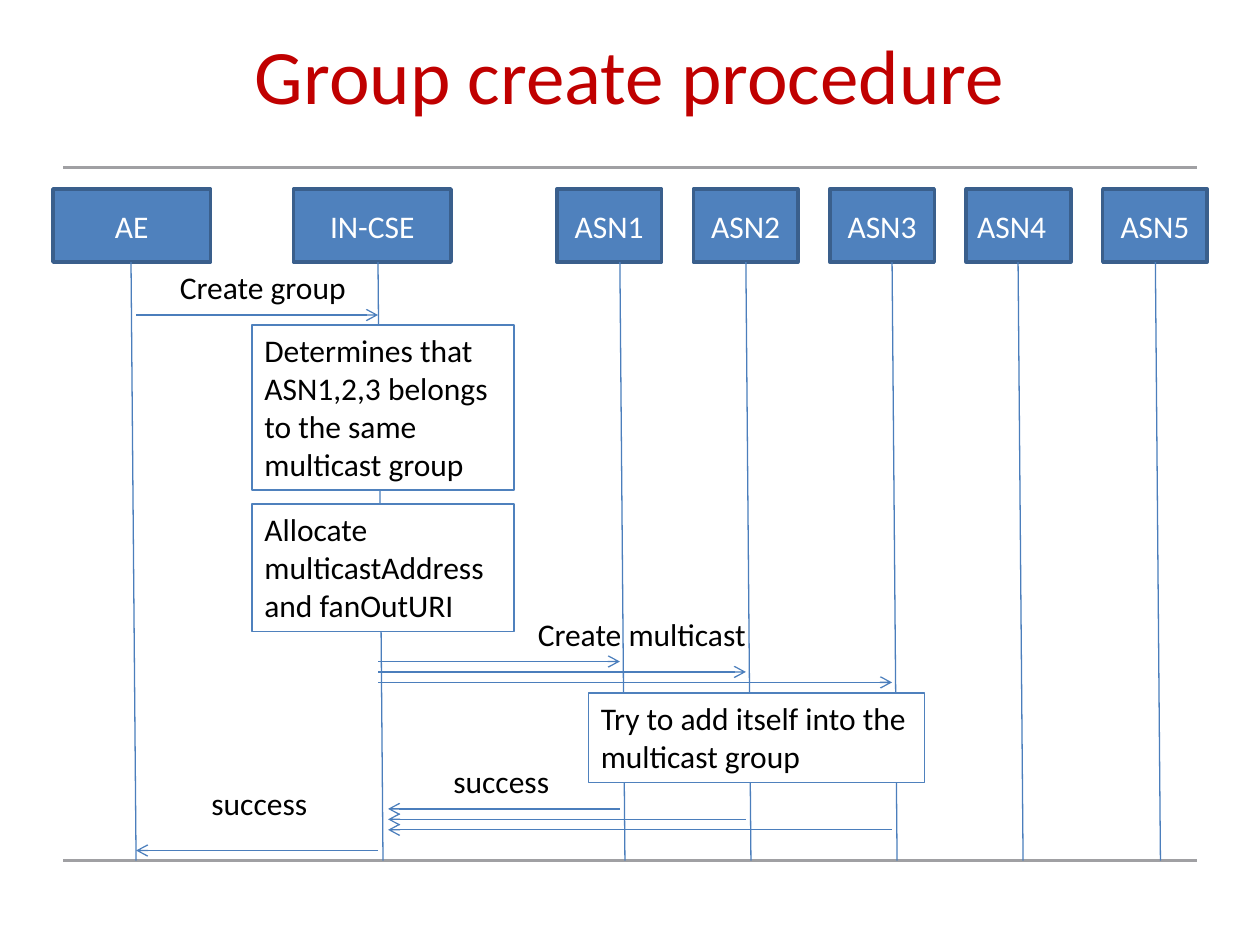
"""Build the group create procedure sequence diagram slide."""
from dataclasses import dataclass

from lxml.etree import SubElement
from pptx import Presentation
from pptx.dml.color import RGBColor
from pptx.enum.shapes import MSO_CONNECTOR as Connector, MSO_SHAPE as Preset
from pptx.enum.text import MSO_ANCHOR as Anchor, PP_ALIGN as Align
from pptx.oxml.ns import qn
from pptx.util import Inches, Pt


@dataclass(frozen=True)
class Theme:
    font: str = "Calibri"
    title_size: float = 44
    body_size: float = 18
    title: str = "C00000"
    text: str = "000000"
    light: str = "FFFFFF"
    box: str = "4F81BD"
    box_edge: str = "3A5F8C"
    line: str = "4B7EBC"
    rule: str = "A0A0A3"
    thin: float = 0.75
    rule_width: float = 1.75
    box_width: float = 2


THEME = Theme()
TITLE = "Group create procedure"
RULES = [1.33, 6.83]
HEAD_TOP, HEAD_HEIGHT = 1.5, 0.58
LIFELINE_TOP, LIFELINE_BOTTOM, LIFELINE_DRIFT = 2.08, 6.83, 0.04
WIDE, NARROW = 1.25, 0.83
ASN_LEFT, ASN_STEP = 4.42, 1.083

LIFELINES = {"AE": 1.04, "IN-CSE": 3, "ASN1": 4.92, "ASN2": 5.92,
             "ASN3": 7.08, "ASN4": 8.08, "ASN5": 9.17}
MARGINS = {"ASN4": (0.05, 0.16)}
HEADS = [("AE", 0.42, WIDE), ("IN-CSE", 2.33, WIDE)] + [
    (f"ASN{number + 1}", ASN_LEFT + number * ASN_STEP, NARROW) for number in range(5)]

GROUP_MEMBERS = ["ASN1", "ASN2", "ASN3"]
MESSAGE_STEP = 0.083
REQUEST_TOP, REPLY_TOP = 5.25, 6.42
REPLY_END = 3.08
AE_EDGE = 1.08

NOTES = [
    ("Determines that ASN1,2,3 belongs to the same multicast group", (2, 2.58, 2.08, 1.31)),
    ("Allocate multicastAddress and fanOutURI", (2, 4, 2.08, 1.01)),
    ("Try to add itself into the multicast group", (4.67, 5.5, 2.67, 0.71)),
]
LABELS = [
    ("Create group", (1.33, 2.08, 1.53, 0.4)),
    ("Create multicast", (4.17, 4.83, 1.87, 0.4)),
    ("success", (3.5, 6, 0.97, 0.4)),
    ("success", (1.58, 6.17, 0.97, 0.4)),
]


def write(shape, text, size=THEME.body_size, color=THEME.text, align=Align.LEFT,
          anchor=Anchor.TOP, wrap=True, margins=(0.1, 0.1)):
    """Put formatted text in a shape."""
    frame = shape.text_frame
    frame.word_wrap = wrap
    frame.vertical_anchor = anchor
    frame.margin_left, frame.margin_right = map(Inches, margins)
    paragraph = frame.paragraphs[0]
    paragraph.text = text
    paragraph.alignment = align
    paragraph.font.name = THEME.font
    paragraph.font.size = Pt(size)
    paragraph.font.color.rgb = RGBColor.from_string(color)


def add_text(slide, text, place, **style):
    """Add a text box."""
    write(slide.shapes.add_textbox(*map(Inches, place)), text, **style)


def add_box(slide, text, place, fill, edge, width, **style):
    """Add a rectangle with text."""
    shape = slide.shapes.add_shape(Preset.RECTANGLE, *map(Inches, place))
    shape.shadow.inherit = False
    shape.fill.solid()
    shape.fill.fore_color.rgb = RGBColor.from_string(fill)
    shape.line.color.rgb = RGBColor.from_string(edge)
    shape.line.width = Pt(width)
    write(shape, text, **style)


def add_line(slide, start, end, color=THEME.line, width=THEME.thin, arrow=False):
    """Add a straight line, with an open arrowhead at its end if asked."""
    points = map(Inches, (*start, *end))
    connector = slide.shapes.add_connector(Connector.STRAIGHT, *points)
    connector.line.color.rgb = RGBColor.from_string(color)
    connector.line.width = Pt(width)
    if arrow:
        SubElement(connector.line._get_or_add_ln(), qn("a:tailEnd"), type="arrow")
    SubElement(connector._element.spPr, qn("a:effectLst"))


def add_message(slide, start, end, y):
    """Add a horizontal message arrow."""
    add_line(slide, (start, y), (end, y), arrow=True)


def main():
    """Build and save the slide."""
    presentation = Presentation()
    presentation.slide_width, presentation.slide_height = Inches(10), Inches(7.5)
    slide = presentation.slides.add_slide(presentation.slide_layouts[6])

    for y in RULES:
        add_line(slide, (0.5, y), (9.5, y), THEME.rule, THEME.rule_width)
    add_text(slide, TITLE, (0.5, 0.17, 9, 1.25), size=THEME.title_size,
             color=THEME.title, align=Align.CENTER)

    for name, left, width in HEADS:
        add_box(slide, name, (left, HEAD_TOP, width, HEAD_HEIGHT),
                THEME.box, THEME.box_edge, THEME.box_width, color=THEME.light,
                align=Align.CENTER, anchor=Anchor.MIDDLE,
                margins=MARGINS.get(name, (0.1, 0.1)))
    for x in LIFELINES.values():
        add_line(slide, (x, LIFELINE_TOP), (x + LIFELINE_DRIFT, LIFELINE_BOTTOM))

    for text, place in NOTES:
        add_box(slide, text, place, THEME.light, THEME.box, THEME.thin)

    server = LIFELINES["IN-CSE"]
    add_message(slide, AE_EDGE, server, 2.5)
    for index, name in enumerate(GROUP_MEMBERS):
        offset = index * MESSAGE_STEP
        add_message(slide, server, LIFELINES[name], REQUEST_TOP + offset)
        add_message(slide, LIFELINES[name], REPLY_END, REPLY_TOP + offset)
    add_message(slide, server, AE_EDGE, 6.75)

    for text, place in LABELS:
        add_text(slide, text, place, wrap=False)

    presentation.save("out.pptx")


if __name__ == "__main__":
    main()
